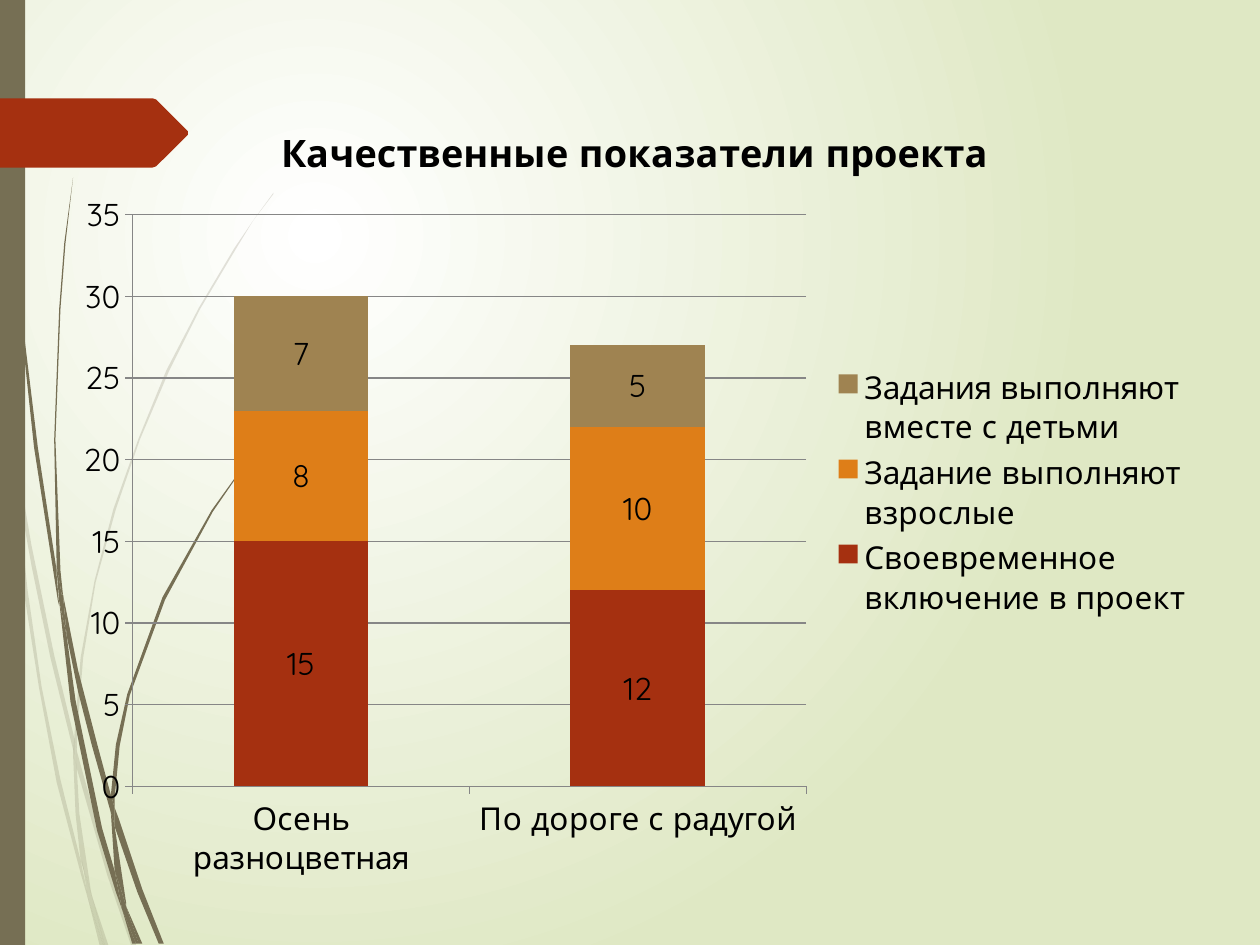
from lxml.etree import SubElement
from pptx import Presentation
from pptx.chart.data import CategoryChartData
from pptx.dml.color import RGBColor
from pptx.enum.chart import XL_CHART_TYPE as ChartType, XL_LEGEND_POSITION as LegendSide
from pptx.enum.chart import XL_TICK_MARK as Tick
from pptx.enum.shapes import MSO_SHAPE as Preset
from pptx.oxml import parse_xml
from pptx.oxml.ns import nsdecls, qn
from pptx.util import Inches, Pt

OLIVE, RUST, ORANGE, SAND = "766F54", "A53010", "DE7E18", "9F8351"
BLACK, GREY = "000000", "868686"
FONT = "Quicksand"
UNIT = Inches(0.01)  # drawing grid: 1000 columns by 750 rows


def paint(fill, color, opacity=100):
    fill.solid()
    fill.fore_color.rgb = RGBColor.from_string(color)
    if opacity < 100:
        tint = fill._xPr.find(".//" + qn("a:srgbClr"))
        SubElement(tint, qn("a:alpha"), val=str(opacity * 1000))


def draw_outline(page, points, color, opacity=100):
    builder = page.shapes.build_freeform(*points[0], scale=UNIT)
    builder.add_line_segments(points[1:], close=True)
    shape = builder.convert_to_shape()
    shape.shadow.inherit = False
    paint(shape.fill, color, opacity)
    shape.line.fill.background()


deck = Presentation()
deck.slide_width, deck.slide_height = 1000 * UNIT, 750 * UNIT
page = deck.slides.add_slide(deck.slide_layouts[6])

# Background: round gradient from white to pale green
backdrop = page.background.fill
backdrop.gradient()
for stop, position, color in zip(backdrop.gradient_stops, (0, 1), ("FFFFFF", "DFE8C4")):
    stop.position = position
    stop.color.rgb = RGBColor.from_string(color)
linear = page._element.find(".//" + qn("a:lin"))
linear.getparent().replace(linear, parse_xml(
    f'<a:path {nsdecls("a")} path="circle">'
    '<a:fillToRect l="50000" t="50000" r="100000" b="100000"/></a:path>'))

# Grass blades on the left: a faint tuft behind a solid one
faint_blades = [
    [(8, 350), (6, 322), (0, 282), (0, 299), (7, 344)],
    [(40, 522), (59, 599), (59, 586), (43, 520), (25, 433), (10, 345), (12, 376), (25, 449)],
    [(64, 607), (61, 596), (61, 610), (85, 694), (104, 750), (108, 750), (88, 692)],
    [(83, 750), (86, 750), (73, 711)],
    [(64, 683), (48, 619), (33, 545), (22, 469), (12, 376), (8, 350), (12, 410),
     (19, 470), (31, 546), (45, 621), (64, 693), (70, 714), (69, 707)],
    [(58, 599), (60, 646), (64, 683), (67, 692), (73, 711), (72, 706), (63, 646),
     (61, 610), (61, 608)],
    [(61, 584), (66, 522), (76, 462), (92, 404), (111, 349), (134, 295), (159, 245),
     (187, 198), (201, 175), (217, 154), (217, 153), (201, 175), (186, 197), (158, 244),
     (132, 294), (110, 348), (90, 404), (75, 461), (64, 522), (59, 584), (59, 586), (61, 596)],
    [(70, 714), (79, 750), (82, 750)],
    [(61, 608), (61, 610), (61, 596), (59, 586), (58, 599)],
    [(67, 692), (65, 683), (69, 707), (70, 714), (82, 750), (83, 750), (73, 711)],
]
solid_blades = [
    [(5, 110), (14, 233), (27, 355), (46, 477), (47, 481), (45, 457), (45, 453),
     (30, 355), (15, 232), (6, 109), (4, 48), (3, 0), (2, 0), (3, 48)],
    [(73, 592), (88, 645), (88, 633), (88, 631), (77, 590), (62, 532), (50, 472),
     (53, 505), (62, 549)],
    [(94, 649), (91, 641), (91, 656), (109, 708), (126, 749), (130, 749), (113, 706)],
    [(91, 691), (81, 657), (60, 556), (53, 505), (47, 477), (56, 557), (77, 659),
     (92, 708), (97, 722), (96, 717)],
    [(50, 472), (48, 453), (44, 349), (48, 245), (52, 193), (58, 141), (51, 193),
     (47, 245), (43, 349), (45, 449), (49, 472)],
    [(110, 749), (113, 749), (100, 719)],
    [(47, 477), (53, 505), (50, 472), (49, 472), (45, 449), (45, 453)],
    [(91, 633), (95, 592), (103, 552), (131, 476), (169, 406), (191, 374), (203, 359),
     (216, 344), (215, 344), (203, 358), (191, 373), (168, 405), (129, 474), (101, 551),
     (92, 591), (88, 631), (91, 641)],
    [(97, 722), (105, 749), (108, 749)],
    [(88, 645), (91, 691), (96, 706), (100, 719), (100, 716), (91, 656), (90, 651)],
    [(88, 645), (90, 651), (91, 656), (91, 641), (88, 631), (88, 633)],
    [(96, 706), (91, 691), (96, 717), (97, 722), (108, 749), (110, 749), (100, 719)],
]
for blades, opacity in ((faint_blades, 20), (solid_blades, 100)):
    for blade in blades:
        draw_outline(page, blade, OLIVE, opacity)

# Side bar and arrow tab
bar = page.shapes.add_shape(Preset.RECTANGLE, 0, 0, 20 * UNIT, deck.slide_height)
bar.shadow.inherit = False
paint(bar.fill, OLIVE)
bar.line.fill.background()
draw_outline(page, [(0, 78), (121, 78), (124, 79), (149, 104), (149, 107),
                    (124, 132), (121, 133), (0, 133)], RUST)

# Stacked column chart
series_rows = [
    ("Своевременное включение в проект", (15, 12), RUST),
    ("Задание выполняют взрослые", (8, 10), ORANGE),
    ("Задания выполняют вместе с детьми", (7, 5), SAND),
]
data = CategoryChartData()
data.categories = ["Осень разноцветная", "По дороге с радугой"]
for name, values, _ in series_rows:
    data.add_series(name, values)
chart = page.shapes.add_chart(ChartType.COLUMN_STACKED, 51 * UNIT, 76 * UNIT,
                              906 * UNIT, 630 * UNIT, data).chart

chart.has_title = True
chart.chart_title.include_in_layout = False
title_frame = chart.chart_title.text_frame
title_frame.text = "Качественные показатели проекта"
title_font = title_frame.paragraphs[0].runs[0].font
for font, size, bold in ((chart.font, 18, False), (title_font, 21.6, True)):
    for key, value in {"name": FONT, "size": Pt(size), "bold": bold}.items():
        setattr(font, key, value)
    paint(font.fill, BLACK)

chart.has_legend = True
chart.legend.position = LegendSide.RIGHT
chart.legend.include_in_layout = False

plot = chart.plots[0]
for key, value in {"gap_width": 150, "overlap": 100, "vary_by_categories": False}.items():
    setattr(plot, key, value)
for series, (_, _, color) in zip(plot.series, series_rows):
    paint(series.format.fill, color)
    series.data_labels.show_value = True

# Axes and grid lines
value_format = {"minimum_scale": 0, "maximum_scale": 35, "major_unit": 5,
                "has_major_gridlines": True}
for key, value in value_format.items():
    setattr(chart.value_axis, key, value)
for axis in (chart.value_axis, chart.category_axis):
    axis.major_tick_mark = Tick.OUTSIDE
for part in (chart.value_axis, chart.category_axis, chart.value_axis.major_gridlines):
    paint(part.format.line.fill, GREY)
    part.format.line.width = Pt(0.75)

# Plot area as shares of the chart's size
area = chart._chartSpace.find(".//" + qn("c:plotArea"))
for old in area.findall(qn("c:layout")):
    area.remove(old)
layout = parse_xml(f'<c:layout {nsdecls("c")}><c:manualLayout/></c:layout>')
settings = {"layoutTarget": "inner", "xMode": "edge", "yMode": "edge",
            "x": 0.06, "y": 0.15, "w": 0.59, "h": 0.72}
for tag, value in settings.items():
    SubElement(layout[0], qn("c:" + tag), val=str(value))
area.insert(0, layout)

deck.save("out.pptx")
